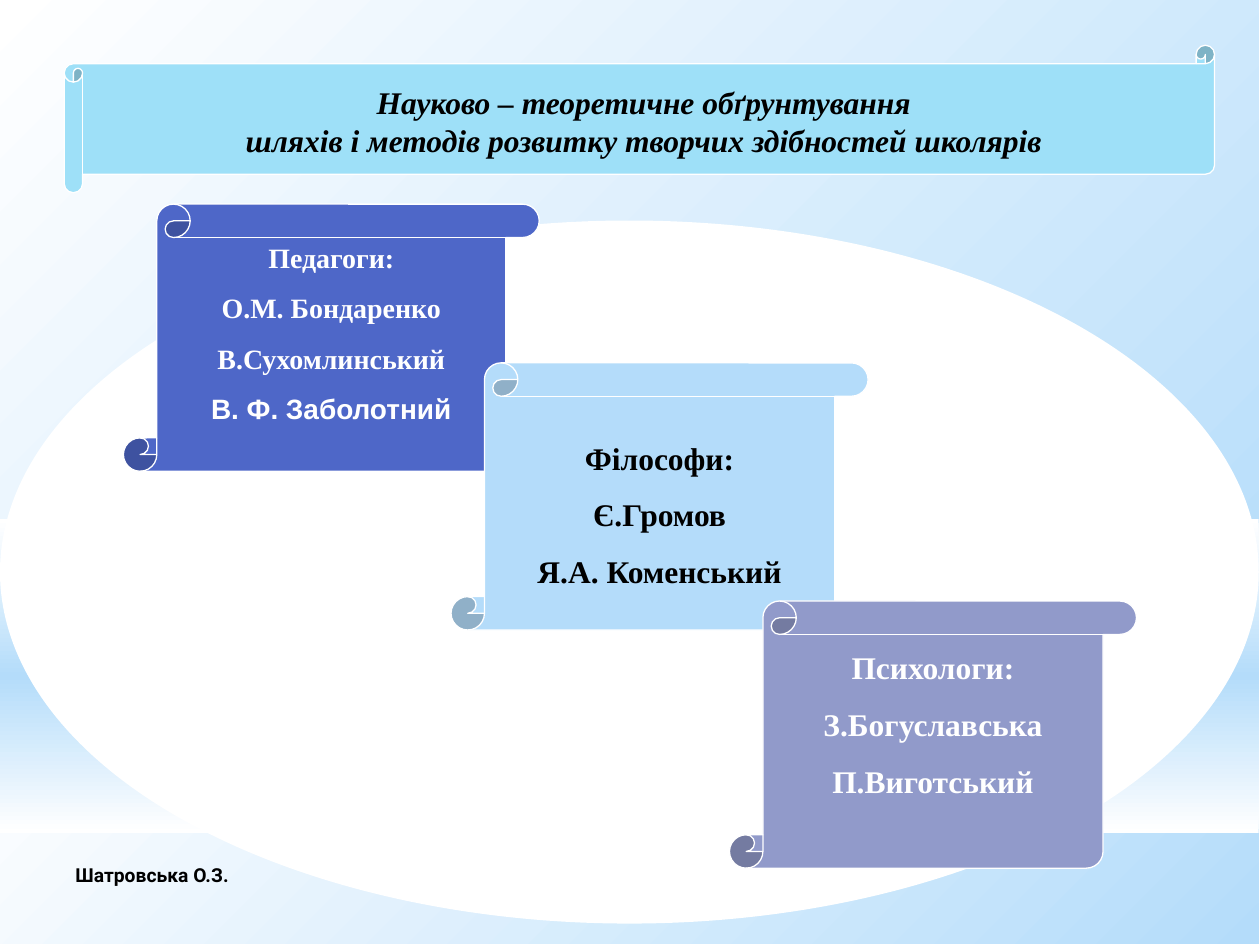
from lxml import etree
from pptx import Presentation
from pptx.dml.color import RGBColor
from pptx.enum import shapes, text
from pptx.oxml import ns
from pptx.util import Inches, Pt

COLOURS = {
    "white": "FFFFFF", "black": "000000", "sky": "B4DCFA",
    "aqua": "9EE0F8", "blue": "4E67C8", "lilac": "919ACA",
}
SERIF = "Times New Roman"
FORM = shapes.MSO_SHAPE


def rgb(name):
    return RGBColor.from_string(COLOURS[name])


def add_form(slide, kind, place, fill=None, outline=False):
    form = slide.shapes.add_shape(kind, *map(Inches, place))
    form.shadow.inherit = False
    if fill:
        form.fill.solid()
        form.fill.fore_color.rgb = rgb(fill)
    if outline:
        form.line.color.rgb = rgb("white")
        form.line.width = Pt(0.75)
    else:
        form.line.fill.background()
    return form


def add_gradient_band(slide, place, stops, angle):
    """Add a borderless band; stops are colours at equal steps."""
    band = add_form(slide, FORM.RECTANGLE, place)
    band.fill.gradient()
    gradient = band._element.spPr.find(ns.qn("a:gradFill"))
    for child in list(gradient):
        gradient.remove(child)
    stop_list = etree.SubElement(gradient, ns.qn("a:gsLst"))
    for index, name in enumerate(stops):
        position = 100000 * index // (len(stops) - 1)
        stop = etree.SubElement(stop_list, ns.qn("a:gs"), pos=str(position))
        etree.SubElement(stop, ns.qn("a:srgbClr"), val=COLOURS[name])
    etree.SubElement(gradient, ns.qn("a:lin"), ang=str(angle * 60000), scaled="0")


def write_lines(box, lines, size, colour, font=SERIF, italic=False,
                align=text.PP_ALIGN.CENTER, spacing=1.0, bottom=0.05, wrap=True):
    """Fill a shape with bold lines; a line is a string or (string, font)."""
    frame = box.text_frame
    frame.auto_size = text.MSO_AUTO_SIZE.NONE
    frame.word_wrap = wrap
    frame.vertical_anchor = text.MSO_ANCHOR.MIDDLE
    frame.margin_bottom = Inches(bottom)
    for index, line in enumerate(lines):
        words, face = line if isinstance(line, tuple) else (line, font)
        para = frame.add_paragraph() if index else frame.paragraphs[0]
        para.alignment = align
        para.line_spacing = spacing
        span = para.add_run()
        span.text = words
        span.font.name = face
        span.font.size = Pt(size)
        span.font.bold = True
        span.font.italic = italic
        span.font.color.rgb = rgb(colour)


def add_backdrop(slide):
    add_gradient_band(slide, (0, 5.58, 9.99, 1.91), ("white", "sky"), 45)
    add_gradient_band(slide, (0, 0, 9.99, 5.58), ("white", "sky"), 45)
    add_gradient_band(slide, (0, 4.12, 9.99, 2.49), ("white", "sky", "white"), 90)
    add_form(slide, FORM.OVAL, (0, 1.75, 9.99, 5.58), "white")


def add_heading(slide):
    add_form(slide, FORM.HORIZONTAL_SCROLL, (0.51, 0.36, 9.13, 1.17), "aqua", True)
    title = slide.shapes.title
    title.left, title.top, title.width, title.height = map(
        Inches, (0.7, 0.51, 8.82, 0.9))
    write_lines(title, ("Науково – теоретичне обґрунтування",
                        "шляхів і методів розвитку творчих здібностей школярів"),
                18, "black", italic=True)
    # Bring the title in front of its scroll
    slide.shapes._spTree.append(title._element)


def add_scroll(slide, place, fill, lines, size, colour, bottom):
    scroll = add_form(slide, FORM.VERTICAL_SCROLL, place, fill, True)
    write_lines(scroll, lines, size, colour, spacing=1.5, bottom=bottom, wrap=False)


def main():
    deck = Presentation()
    deck.slide_width, deck.slide_height = Inches(10), Inches(7.5)
    slide = deck.slides.add_slide(deck.slide_layouts[5])

    add_backdrop(slide)
    add_heading(slide)

    # Scrolls with names, stepping down to the right
    add_scroll(slide, (0.98, 1.62, 3.3, 2.12), "blue",
               ("Педагоги:", "О.М. Бондаренко", "В.Сухомлинський",
                ("В. Ф. Заболотний", "Arial")), 16, "white", 0.39)
    add_scroll(slide, (3.58, 2.88, 3.31, 2.12), "sky",
               ("Філософи:", "Є.Громов", "Я.А. Коменський"), 18, "black", 0.05)
    add_scroll(slide, (5.79, 4.77, 3.23, 2.12), "lilac",
               ("Психологи:", "З.Богуславська", "П.Виготський"), 18, "white", 0.5)

    # Author
    author = slide.shapes.add_textbox(*map(Inches, (0.5, 6.75, 3.66, 0.39)))
    write_lines(author, ("Шатровська О.З.",), 11, "black", font="Roboto",
                align=text.PP_ALIGN.LEFT)

    deck.save("out.pptx")


if __name__ == "__main__":
    main()
